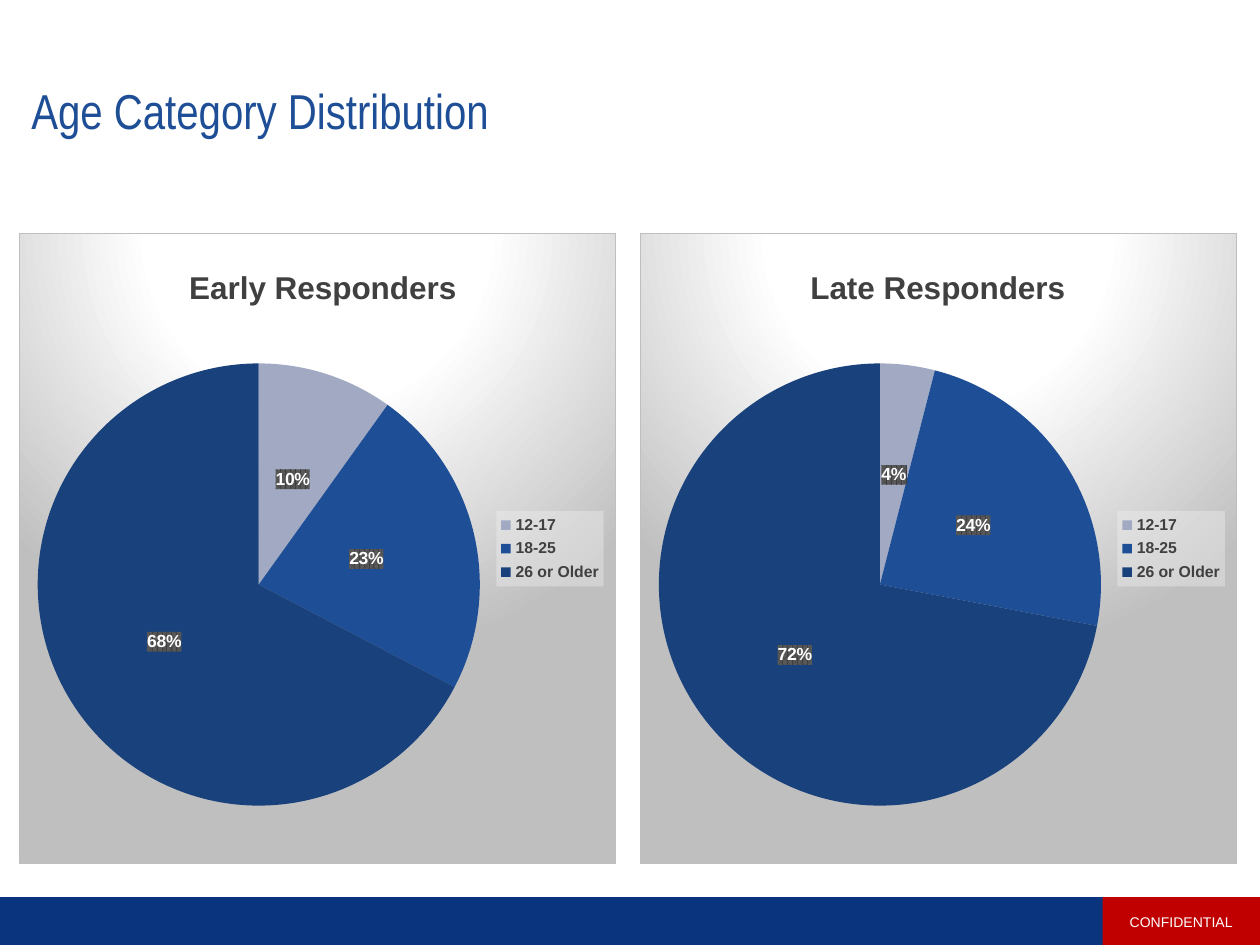
from lxml import etree
from pptx import Presentation
from pptx.chart.data import CategoryChartData
from pptx.dml.color import RGBColor
from pptx.enum.chart import XL_CHART_TYPE as ChartType, XL_LABEL_POSITION as LabelPosition
from pptx.enum.chart import XL_LEGEND_POSITION as LegendPosition
from pptx.enum.shapes import MSO_SHAPE as ShapeType
from pptx.enum.text import MSO_ANCHOR as Anchor, PP_ALIGN as Align
from pptx.oxml import parse_xml
from pptx.oxml.ns import nsdecls, qn
from pptx.util import Inches, Pt

NAVY = RGBColor(0x0A, 0x35, 0x7E)
BLUE = RGBColor(0x1E, 0x4E, 0x96)
DARK_BLUE = RGBColor(0x19, 0x41, 0x7C)
LAVENDER = RGBColor(0xA2, 0xAA, 0xC3)
RED = RGBColor(0xC0, 0x00, 0x00)
WHITE = RGBColor(0xFF, 0xFF, 0xFF)
GRAY = RGBColor(0x40, 0x40, 0x40)

AGES = ("12-17", "18-25", "26 or Older")
RESPONDERS = {"Early Responders": (10, 23, 68), "Late Responders": (4, 24, 72)}

PANEL_FILL = (
    '<a:gradFill><a:gsLst><a:gs pos="0"><a:srgbClr val="FFFFFF"/></a:gs>'
    '<a:gs pos="39000"><a:srgbClr val="FFFFFF"/></a:gs>'
    '<a:gs pos="100000"><a:srgbClr val="BFBFBF"/></a:gs></a:gsLst>'
    '<a:path path="circle"><a:fillToRect l="50000" t="-80000" r="50000" b="180000"/></a:path>'
    '</a:gradFill><a:ln w="9525"><a:solidFill><a:srgbClr val="BFBFBF"/></a:solidFill></a:ln>'
)
LEGEND_FILL = (
    '<a:solidFill><a:srgbClr val="F2F2F2"><a:alpha val="39000"/></a:srgbClr></a:solidFill>'
)
LABEL_FILL = (
    '<a:pattFill prst="pct75"><a:fgClr><a:srgbClr val="404040"/></a:fgClr>'
    '<a:bgClr><a:srgbClr val="595959"/></a:bgClr></a:pattFill>'
)


def chart_properties(content):
    return parse_xml(f'<c:spPr {nsdecls("c", "a")}>{content}</c:spPr>')


def set_layout(element, **fractions):
    """Place a chart part by fractions of the chart's size."""
    layout = element.find(qn("c:layout"))
    if layout is None:
        layout = etree.Element(qn("c:layout"))
        before = element.find(qn("c:tx"))
        if before is None:
            before = element.find(qn("c:legendPos"))
        if before is None:
            element.insert(0, layout)
        else:
            before.addnext(layout)
    for child in list(layout):
        layout.remove(child)
    manual = etree.SubElement(layout, qn("c:manualLayout"))
    if element.tag == qn("c:plotArea"):
        etree.SubElement(manual, qn("c:layoutTarget")).set("val", "inner")
    for axis in ("x", "y"):
        etree.SubElement(manual, qn(f"c:{axis}Mode")).set("val", "edge")
    for name, value in fractions.items():
        etree.SubElement(manual, qn(f"c:{name}")).set("val", str(value))


class SlideBuilder:
    def __init__(self, slide, font_name="Arial"):
        self.slide = slide
        self.font_name = font_name

    def style(self, font, color, **values):
        font.color.rgb = color
        for name, value in {"name": self.font_name, **values}.items():
            setattr(font, name, value)

    def bar(self, left, width, color):
        shape = self.slide.shapes.add_shape(
            ShapeType.RECTANGLE, Inches(left), Inches(7.12), Inches(width), Inches(0.39))
        shape.shadow.inherit = False
        shape.fill.solid()
        shape.fill.fore_color.rgb = color
        shape.line.fill.background()
        return shape

    def tag(self, left, width, color, text):
        frame = self.bar(left, width, color).text_frame
        frame.vertical_anchor = Anchor.MIDDLE
        paragraph = frame.paragraphs[0]
        paragraph.text = text
        paragraph.alignment = Align.CENTER
        paragraph.space_after = Pt(6)
        self.style(paragraph.runs[0].font, WHITE, size=Pt(8))

    def title(self, text):
        frame = self.slide.shapes.add_textbox(
            Inches(0.15), Inches(0.2), Inches(9.67), Inches(1.4)).text_frame
        settings = {
            "word_wrap": True, "vertical_anchor": Anchor.MIDDLE,
            "margin_left": Inches(0.1), "margin_top": Inches(0.1),
            "margin_right": Inches(0.2), "margin_bottom": Inches(0.1),
        }
        for name, value in settings.items():
            setattr(frame, name, value)
        paragraph = frame.paragraphs[0]
        paragraph.text = text
        paragraph.line_spacing = 0.9
        self.style(paragraph.runs[0].font, BLUE, name="Arial Narrow", size=Pt(28))

    def pie(self, left, title, values):
        data = CategoryChartData()
        data.categories = AGES
        data.add_series("Series 1", values)
        chart = self.slide.shapes.add_chart(
            ChartType.PIE, Inches(left), Inches(1.85), Inches(4.74), Inches(5.01), data).chart
        self.style(chart.font, RGBColor(0, 0, 0), size=Pt(10))
        chart_element = chart.element.find(qn("c:chart"))
        chart_element.addnext(chart_properties(PANEL_FILL))
        set_layout(chart_element.find(qn("c:plotArea")), x=0.03, y=0.206, w=0.743, h=0.702)

        frame = chart.chart_title.text_frame
        frame.text = title
        self.style(frame.paragraphs[0].runs[0].font, GRAY, size=Pt(18), bold=True)
        set_layout(chart_element.find(qn("c:title")), x=0.275, y=0.043)

        chart.has_legend = True
        legend = chart.legend
        legend.position = LegendPosition.RIGHT
        legend.include_in_layout = False
        self.style(legend.font, GRAY, size=Pt(9), bold=True)
        legend_element = chart_element.find(qn("c:legend"))
        set_layout(legend_element, x=0.8, y=0.44, w=0.18, h=0.12)
        legend_element.find(qn("c:txPr")).addprevious(chart_properties(LEGEND_FILL))

        plot = chart.plots[0]
        plot.vary_by_categories = True
        series = plot.series[0]
        for index, color in enumerate((LAVENDER, BLUE, DARK_BLUE)):
            fill = series.points[index].format.fill
            fill.solid()
            fill.fore_color.rgb = color

        labels = series.data_labels
        settings = {
            "show_value": True, "number_format": '0"%"',
            "number_format_is_linked": False, "position": LabelPosition.CENTER,
        }
        for name, value in settings.items():
            setattr(labels, name, value)
        self.style(labels.font, WHITE, size=Pt(10), bold=True)
        label_text = chart_element.find(f".//{qn('c:dLbls')}/{qn('c:txPr')}")
        label_text.addprevious(chart_properties(LABEL_FILL))


def main():
    presentation = Presentation()
    presentation.slide_width = Inches(10)
    presentation.slide_height = Inches(7.5)
    builder = SlideBuilder(presentation.slides.add_slide(presentation.slide_layouts[6]))
    builder.bar(0, 10, NAVY)
    builder.title("Age Category Distribution")
    builder.tag(8.75, 1.25, RED, "CONFIDENTIAL")
    for index, (title, values) in enumerate(RESPONDERS.items()):
        builder.pie(0.15 + index * 4.93, title, values)
    presentation.save("out.pptx")


if __name__ == "__main__":
    main()
